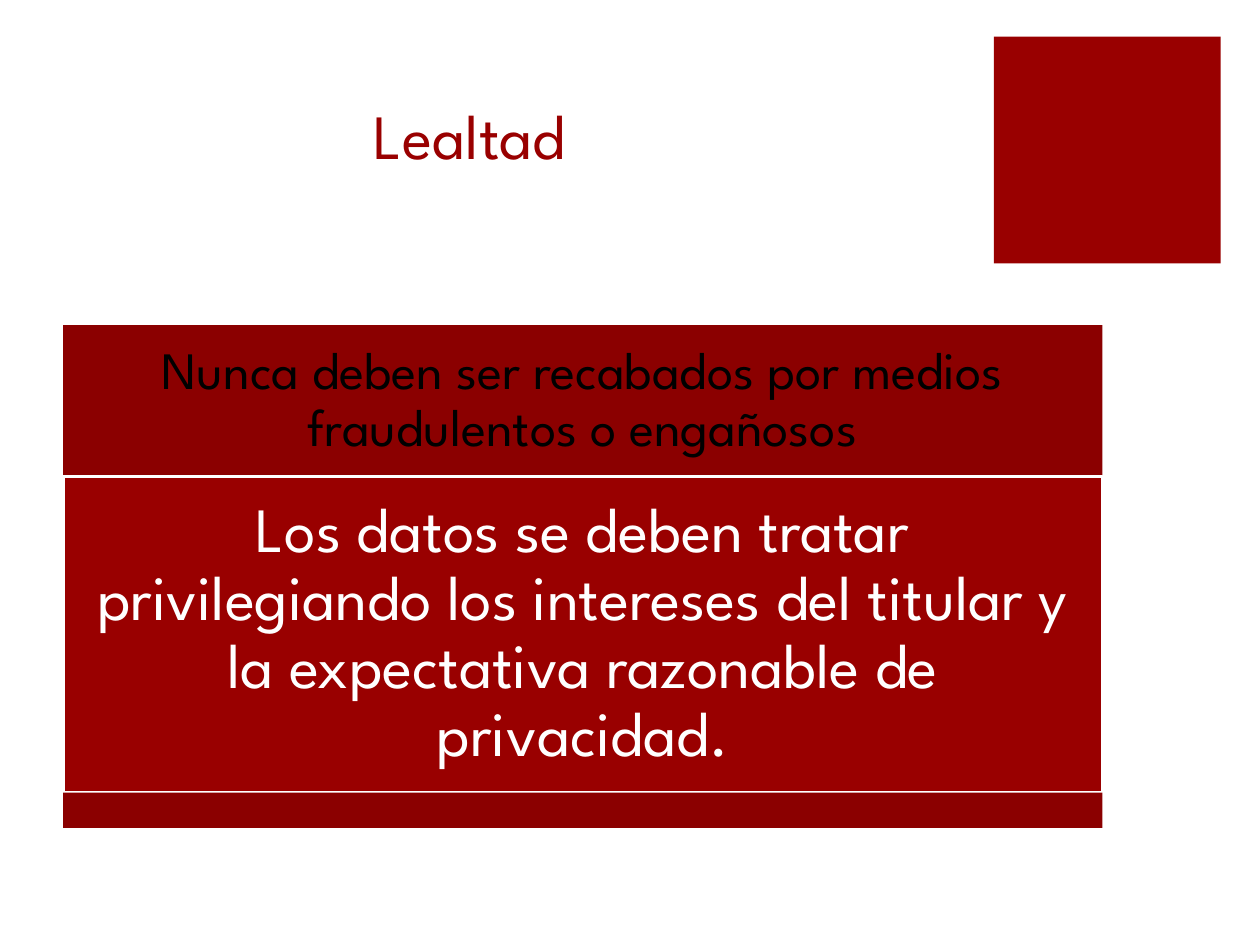
from pptx import Presentation
from pptx.dml.color import RGBColor
from pptx.enum.shapes import MSO_SHAPE
from pptx.enum.text import MSO_ANCHOR, MSO_AUTO_SIZE, PP_ALIGN
from pptx.util import Pt

TITLE = "Lealtad"
FONT = "League Spartan"
COLORS = {"red": "990000", "dark": "8B0000", "white": "FFFFFF", "black": "000000"}

# text, height, fill, outline, text colour, text size, inset
BANDS = [
    ("Nunca deben ser recabados por medios fraudulentos o engañosos",
     86.4, "dark", None, "black", 30, 8.4),
    ("Los datos se deben tratar privilegiando los intereses del titular "
     "y la expectativa razonable de privacidad.",
     180.7, "red", "white", "white", 36, 10.8),
    ("", 20.2, "dark", None, "white", 30, 0),
]
LEFT, TOP, WIDTH = 36, 185.8, 594


def color(name):
    return RGBColor.from_string(COLORS[name])


def add_box(slide, left, top, width, height, fill, line=None):
    box = slide.shapes.add_shape(
        MSO_SHAPE.RECTANGLE, Pt(left), Pt(top), Pt(width), Pt(height))
    box.shadow.inherit = False
    box.fill.solid()
    box.fill.fore_color.rgb = color(fill)
    if line:
        box.line.color.rgb = color(line)
        box.line.width = Pt(2)
    else:
        box.line.fill.background()
    return box


def set_text(shape, text, size, ink, anchor):
    frame = shape.text_frame
    frame.text = text
    frame.word_wrap = True
    frame.auto_size = MSO_AUTO_SIZE.NONE
    frame.vertical_anchor = anchor
    para = frame.paragraphs[0]
    para.alignment = PP_ALIGN.CENTER
    font = para.runs[0].font
    font.name = FONT
    font.size = Pt(size)
    font.color.rgb = color(ink)
    return para


def set_inset(frame, inset):
    frame.margin_left = frame.margin_right = Pt(inset)
    frame.margin_top = frame.margin_bottom = Pt(inset)


def main():
    deck = Presentation()
    deck.slide_width, deck.slide_height = Pt(720), Pt(540)
    slide = deck.slides.add_slide(deck.slide_layouts[5])
    slide.background.fill.solid()
    slide.background.fill.fore_color.rgb = color("white")

    title = slide.shapes.title
    title.left, title.top = Pt(12.2), Pt(12.2)
    title.width, title.height = Pt(512.6), Pt(90)
    set_text(title, TITLE, 36, "red", MSO_ANCHOR.BOTTOM)

    add_box(slide, 568, 21, 129.6, 129.6, "red")

    top = TOP
    for text, height, fill, line, ink, size, inset in BANDS:
        band = add_box(slide, LEFT, top, WIDTH, height, fill, line)
        if text:
            para = set_text(band, text, size, ink, MSO_ANCHOR.MIDDLE)
            para.line_spacing = 0.9
            para.space_after = Pt(0.35 * size)
            set_inset(band.text_frame, inset)
        top += height

    deck.save("out.pptx")


if __name__ == "__main__":
    main()
